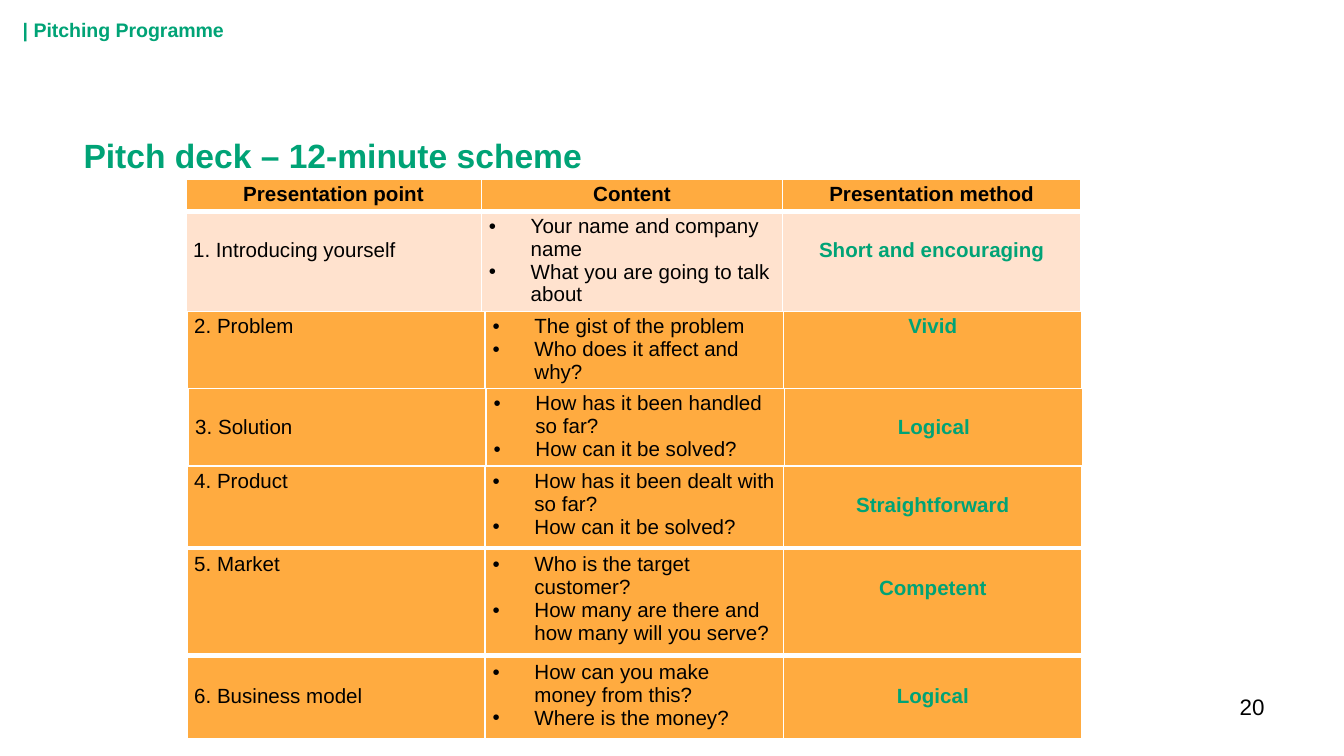
from lxml.etree import SubElement
from pptx import Presentation
from pptx.dml.color import RGBColor
from pptx.enum.text import MSO_ANCHOR, PP_ALIGN
from pptx.oxml.ns import qn
from pptx.util import Cm, Pt

GREEN = RGBColor(0x00, 0xA3, 0x76)
BLACK = RGBColor(0x00, 0x00, 0x00)
WHITE = RGBColor(0xFF, 0xFF, 0xFF)
ORANGE = RGBColor(0xFF, 0xAB, 0x40)
PEACH = RGBColor(0xFF, 0xE2, 0xCE)

TABLE_TEXT = {"name": "Arial", "size": Pt(11), "bold": False}
TABLE_STRONG = {**TABLE_TEXT, "bold": True}
TITLE_TEXT = {"name": "Arial", "size": Pt(18), "bold": True}
PROGRAMME_TEXT = {"name": "Arial", "size": Pt(10.5), "bold": True}
NUMBER_TEXT = {"name": "Arial", "size": Pt(12), "bold": False}
BOX_FORMAT = {
    "word_wrap": True,
    "margin_left": Cm(0.23), "margin_right": Cm(0.23),
    "margin_top": Cm(0.11), "margin_bottom": Cm(0.11),
}
CELL_FORMAT = {
    "margin_left": Cm(0.14), "margin_right": Cm(0.14),
    "margin_top": Cm(0.07), "margin_bottom": Cm(0.07),
}
LOWERED_CELL = {**CELL_FORMAT, "margin_top": Cm(0.52)}

EVEN_COLUMNS = (5.64, 5.64, 5.64)
OPENING_COLUMNS = (5.59, 5.69, 5.64)
HEADINGS = ("Presentation point", "Content", "Presentation method")
INTRODUCTION = ("1. Introducing yourself",
                ("Your name and company name", "What you are going to talk about"),
                "Short and encouraging")
# Each step: left, top, height, point lowered, method lowered, texts
STEPS = (
    (3.53, 5.89, 1.55, False, False,
     ("2. Problem", ("The gist of the problem", "Who does it affect and why?"), "Vivid")),
    (3.55, 7.34, 1.57, True, True,
     ("3. Solution", ("How has it been handled so far?", "How can it be solved?"), "Logical")),
    (3.53, 8.81, 1.55, False, True,
     ("4. Product", ("How has it been dealt with so far?", "How can it be solved?"),
      "Straightforward")),
    (3.53, 10.39, 2.01, False, True,
     ("5. Market", ("Who is the target customer?",
                    "How many are there and how many will you serve?"), "Competent")),
    (3.53, 12.42, 1.57, True, True,
     ("6. Business model", ("How can you make money from this?", "Where is the money?"),
      "Logical")),
)


def apply_format(target, values):
    """Set every attribute named in values on the target."""
    for name, value in values.items():
        setattr(target, name, value)


def write(paragraph, text, text_format, color, align=PP_ALIGN.LEFT):
    """Fill a paragraph with one formatted run."""
    paragraph.alignment = align
    run = paragraph.add_run()
    run.text = text
    apply_format(run.font, text_format)
    run.font.color.rgb = color


def indent(paragraph, hang):
    """Give a paragraph a hanging indent and return its properties."""
    properties = paragraph._p.get_or_add_pPr()
    properties.set("marL", str(hang))
    properties.set("indent", str(-hang))
    return properties


def add_bullet(paragraph):
    """Put a black round bullet before a paragraph."""
    properties = indent(paragraph, Cm(0.79))
    bullet_color = SubElement(properties, qn("a:buClr"))
    SubElement(bullet_color, qn("a:srgbClr"), val=str(BLACK))
    SubElement(properties, qn("a:buFont"), typeface="Arial")
    SubElement(properties, qn("a:buChar"), char="•")


def add_label(slide, place, text, text_format, color, align=PP_ALIGN.LEFT,
              anchor=MSO_ANCHOR.TOP):
    """Add a one-paragraph text box and return its paragraph."""
    frame = slide.shapes.add_textbox(*map(Cm, place)).text_frame
    apply_format(frame, {**BOX_FORMAT, "vertical_anchor": anchor})
    write(frame.paragraphs[0], text, text_format, color, align)
    return frame.paragraphs[0]


def style_cell(cell, fill, cell_format=CELL_FORMAT, top=1, bottom=3):
    """Set the margins, white borders and fill of a cell."""
    apply_format(cell, cell_format)
    properties = cell._tc.get_or_add_tcPr()
    for side, width in (("L", 1), ("R", 1), ("T", top), ("B", bottom)):
        border = SubElement(properties, qn(f"a:ln{side}"), w=str(Pt(width)))
        border_fill = SubElement(border, qn("a:solidFill"))
        SubElement(border_fill, qn("a:srgbClr"), val=str(WHITE))
    cell.fill.solid()
    cell.fill.fore_color.rgb = fill


def add_grid(slide, left, top, columns, heights):
    """Add a plain table with the given column widths and row heights."""
    frame = slide.shapes.add_table(len(heights), len(columns), Cm(left), Cm(top),
                                   Cm(sum(columns)), Cm(sum(heights)))
    grid = frame.table
    apply_format(grid, {"first_row": False, "horz_banding": False})
    for column, width in zip(grid.columns, columns):
        column.width = Cm(width)
    for row, height in zip(grid.rows, heights):
        row.height = Cm(height)
    return grid


def fill_step(row, texts, fill, point_lowered, method_lowered, **borders):
    """Write one pitch step: its point, bulleted content and method."""
    point, content, method = row.cells
    point_text, questions, method_text = texts
    style_cell(point, fill, LOWERED_CELL if point_lowered else CELL_FORMAT, **borders)
    style_cell(content, fill, **borders)
    style_cell(method, fill, LOWERED_CELL if method_lowered else CELL_FORMAT, **borders)
    write(point.text_frame.paragraphs[0], point_text, TABLE_TEXT, BLACK)
    for number, question in enumerate(questions):
        frame = content.text_frame
        paragraph = frame.add_paragraph() if number else frame.paragraphs[0]
        write(paragraph, question, TABLE_TEXT, BLACK)
        add_bullet(paragraph)
    write(method.text_frame.paragraphs[0], method_text, TABLE_STRONG, GREEN,
          PP_ALIGN.CENTER)


def add_opening(slide):
    """Add the table with the headings and the introduction step."""
    opening = add_grid(slide, 3.51, 3.38, OPENING_COLUMNS, (0.61, 2.01))
    for cell, heading in zip(opening.rows[0].cells, HEADINGS):
        style_cell(cell, ORANGE)
        write(cell.text_frame.paragraphs[0], heading, TABLE_STRONG, BLACK,
              PP_ALIGN.CENTER)
    fill_step(opening.rows[1], INTRODUCTION, PEACH, True, True, top=3, bottom=1)


def main():
    """Build the pitch deck slide."""
    deck = Presentation()
    apply_format(deck, {"slide_width": Cm(25.4), "slide_height": Cm(14.29)})
    slide = deck.slides.add_slide(deck.slide_layouts[6])
    title = add_label(slide, (1.35, 1.68, 22.73, 2.69), "Pitch deck – 12-minute scheme",
                      TITLE_TEXT, GREEN)
    title.line_spacing = 2.0
    indent(title, Cm(1.52))
    add_opening(slide)
    for left, top, height, point_lowered, method_lowered, texts in STEPS:
        step = add_grid(slide, left, top, EVEN_COLUMNS, (height,))
        fill_step(step.rows[0], texts, ORANGE, point_lowered, method_lowered)
    add_label(slide, (18.21, 13, 5.92, 0.99), "20", NUMBER_TEXT, BLACK, PP_ALIGN.RIGHT)
    add_label(slide, (0.2, 0.15, 19.2, 0.84), "| Pitching Programme", PROGRAMME_TEXT,
              GREEN, anchor=MSO_ANCHOR.MIDDLE)
    deck.save("out.pptx")


if __name__ == "__main__":
    main()
